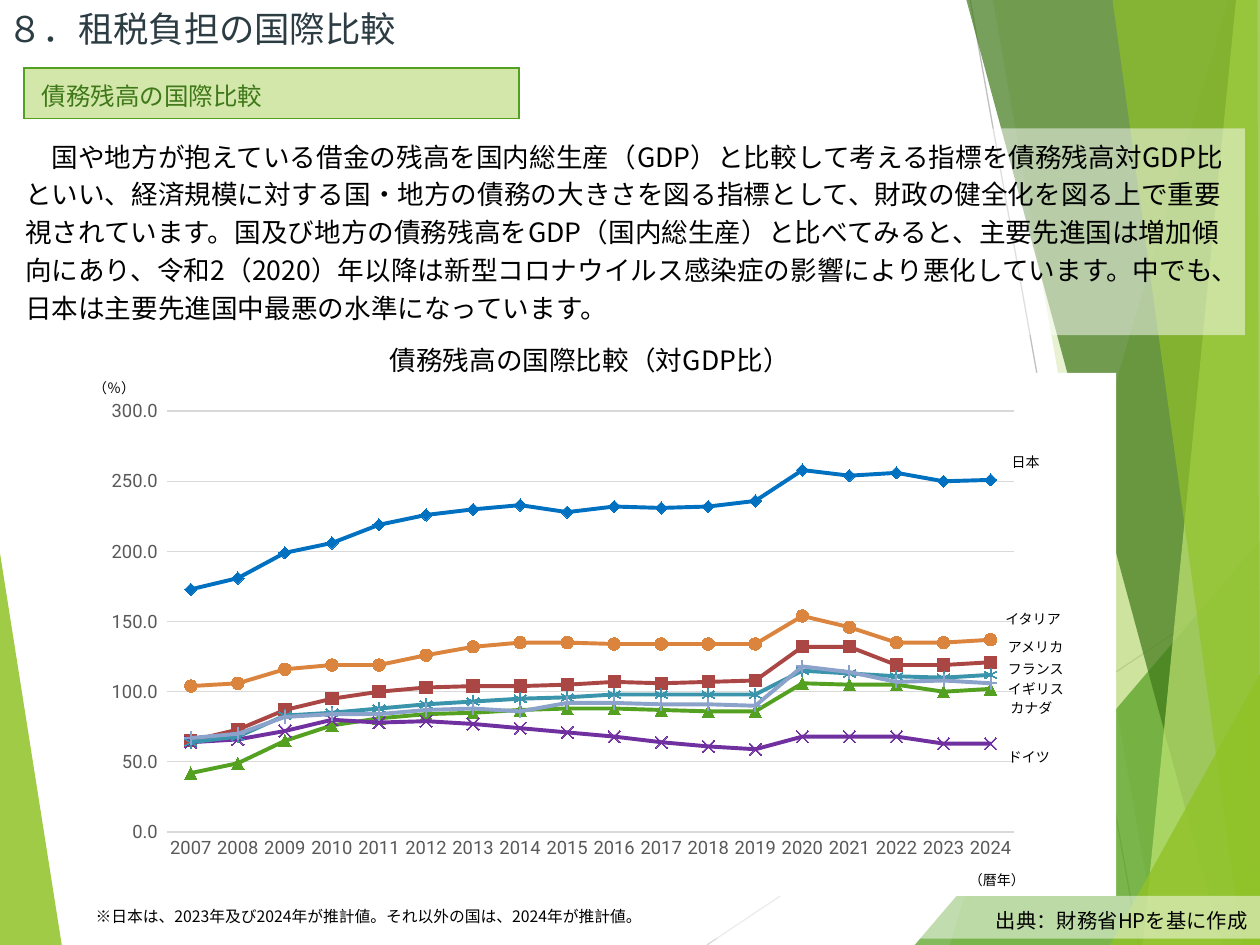
from lxml import etree
from pptx import Presentation
from pptx.chart.data import CategoryChartData
from pptx.dml.color import RGBColor
from pptx.enum.chart import XL_CHART_TYPE, XL_MARKER_STYLE, XL_TICK_MARK
from pptx.enum.shapes import MSO_CONNECTOR, MSO_SHAPE
from pptx.enum.text import MSO_ANCHOR, MSO_AUTO_SIZE, PP_ALIGN
from pptx.oxml import parse_xml
from pptx.oxml.ns import nsdecls, qn
from pptx.util import Inches, Pt

LEFT, CENTER, RIGHT = PP_ALIGN.LEFT, PP_ALIGN.CENTER, PP_ALIGN.RIGHT
TOP, MIDDLE = MSO_ANCHOR.TOP, MSO_ANCHOR.MIDDLE
MARKER = XL_MARKER_STYLE
JAPANESE, LATIN = "Noto Sans CJK JP", "Roboto"

# The slide is a grid of 100 columns by 75 rows
WIDTH, HEIGHT = Inches(10), Inches(7.5)
COLUMNS, ROWS = 100, 75

COLORS = {
    "white": "FFFFFF", "black": "000000", "title": "2C3C43", "gray": "595959",
    "grid": "D9D9D9", "ray": "BFBFBF", "lime": "90C226", "pale": "C0E474",
    "green": "54A021", "dark": "3F7819", "heading": "D2E7A9",
}

# Content
TITLE = "８．租税負担の国際比較"
HEADING = "債務残高の国際比較"
BODY = (
    "　国や地方が抱えている借金の残高を国内総生産（GDP）と比較して考える指標を"
    "債務残高対GDP比といい、経済規模に対する国・地方の債務の大きさを図る指標として、"
    "財政の健全化を図る上で重要視されています。国及び地方の債務残高をGDP（国内総生産）と"
    "比べてみると、主要先進国は増加傾向にあり、令和2（2020）年以降は新型コロナウイルス"
    "感染症の影響により悪化しています。中でも、日本は主要先進国中最悪の水準になっています。"
)
CHART_TITLE = "債務残高の国際比較（対GDP比）"
SOURCE = "出典：財務省HPを基に作成"
NOTE = "※日本は、2023年及び2024年が推計値。それ以外の国は、2024年が推計値。"

YEARS = [str(year) for year in range(2007, 2025)]
# Country, colour, marker, filled marker, values
SERIES = [
    ("日本", "0070C0", MARKER.DIAMOND, True,
     (173, 181, 199, 206, 219, 226, 230, 233, 228, 232, 231, 232, 236, 258, 254, 256, 250, 251)),
    ("アメリカ", "AA4643", MARKER.SQUARE, True,
     (65, 73, 87, 95, 100, 103, 104, 104, 105, 107, 106, 107, 108, 132, 132, 119, 119, 121)),
    ("イギリス", "54A021", MARKER.TRIANGLE, True,
     (42, 49, 65, 76, 81, 84, 85, 87, 88, 88, 87, 86, 86, 106, 105, 105, 100, 102)),
    ("ドイツ", "7030A0", MARKER.X, False,
     (64, 66, 72, 80, 78, 79, 77, 74, 71, 68, 64, 61, 59, 68, 68, 68, 63, 63)),
    ("フランス", "3994AC", MARKER.STAR, False,
     (64, 68, 83, 85, 88, 91, 93, 95, 96, 98, 98, 98, 98, 115, 113, 111, 110, 112)),
    ("イタリア", "DB843D", MARKER.CIRCLE, True,
     (104, 106, 116, 119, 119, 126, 132, 135, 135, 134, 134, 134, 134, 154, 146, 135, 135, 137)),
    ("カナダ", "8BA3CA", MARKER.PLUS, False,
     (67, 70, 82, 84, 84, 87, 88, 86, 92, 92, 91, 91, 90, 118, 114, 107, 108, 106)),
]
PLOT = {"x": 0.073, "y": 0.055, "w": 0.895, "h": 0.823}
# Text, column, row, columns wide
CHART_LABELS = [
    ("（％）", 6.4, 29.6, 5.7), ("（暦年）", 75.9, 68.7, 6.9), ("日本", 79.3, 35.5, 4.5),
    ("イタリア", 78.8, 48, 6.9), ("アメリカ", 79, 50.2, 6.9), ("フランス", 79, 51.9, 6.9),
    ("カナダ", 79.2, 55, 5.7), ("イギリス", 79, 53.5, 6.9), ("ドイツ", 79, 58.9, 5.7),
]

# Backdrop: colour, opacity in percent, corners as (column, row)
RAYS = [("grid", (56.1, 75), (100, 45.7)), ("ray", (77, 0), (90.4, 75))]
FACETS = [
    ("lime", 85, [(0, 43.9), (4.9, 75), (0, 75)]),
    ("lime", 30, [(97.5, 0), (75.4, 75), (100, 75), (100, 0)]),
    ("lime", 20, [(78.8, 0), (91.9, 75), (100, 75), (100, 0)]),
    ("green", 72, [(72.6, 75), (100, 42.9), (100, 75)]),
    ("dark", 70, [(76.7, 0), (97, 75), (100, 75), (100, 0)]),
    ("pale", 70, [(98.1, 0), (90.7, 75), (100, 75), (100, 0)]),
    ("lime", 65, [(88.3, 0), (98.6, 75), (100, 75), (99.8, 0)]),
    ("lime", 80, [(88.1, 75), (100, 53.5), (100, 75)]),
]

presentation = Presentation()
presentation.slide_width, presentation.slide_height = WIDTH, HEIGHT
slide = presentation.slides.add_slide(presentation.slide_layouts[6])
shapes = slide.shapes


def place(column, row):
    return int(WIDTH * column / COLUMNS), int(HEIGHT * row / ROWS)


def box(column, row, columns, rows):
    return place(column, row) + place(columns, rows)


def color(name):
    return RGBColor.from_string(COLORS.get(name, name))


def paint(shape, name, opacity=100):
    shape.shadow.inherit = False
    shape.line.fill.background()
    shape.fill.solid()
    shape.fill.fore_color.rgb = color(name)
    if opacity < 100:
        rgb = shape.fill._xPr.find(".//" + qn("a:srgbClr"))
        etree.SubElement(rgb, qn("a:alpha"), val=str(opacity * 1000))


def style_font(font, size, name, family):
    font.size, font.name = Pt(size), family
    font.color.rgb = color(name)


def write(frame, text, size, name="black", family=JAPANESE, align=LEFT, spacing=None):
    frame.text = text
    paragraph = frame.paragraphs[0]
    paragraph.alignment = align
    if spacing:
        paragraph.line_spacing = Pt(spacing)
    run = paragraph.runs[0]
    style_font(run.font, size, name, family)
    east_asian = parse_xml(f'<a:ea {nsdecls("a")} typeface="{family}"/>')
    run.font._element.find(qn("a:latin")).addnext(east_asian)


def add_panel(area, text, size, align, spacing):
    panel = shapes.add_shape(MSO_SHAPE.RECTANGLE, *box(*area))
    paint(panel, "white", 50)
    frame = panel.text_frame
    frame.word_wrap, frame.vertical_anchor = True, TOP
    frame.auto_size = MSO_AUTO_SIZE.SHAPE_TO_FIT_TEXT
    write(frame, text, size, align=align, spacing=spacing)


def add_text(area, text, size, wrap=True, **style):
    frame = shapes.add_textbox(*box(*area)).text_frame
    frame.word_wrap = wrap
    write(frame, text, size, **style)
    return frame


# Backdrop
for name, start, end in RAYS:
    ray = shapes.add_connector(MSO_CONNECTOR.STRAIGHT, *place(*start), *place(*end))
    ray.line.color.rgb, ray.line.width = color(name), Pt(0.75)
    etree.SubElement(ray._element.spPr, qn("a:effectLst"))
for name, opacity, corners in FACETS:
    points = [place(*corner) for corner in corners]
    builder = shapes.build_freeform(*points[0])
    builder.add_line_segments(points[1:], close=True)
    paint(builder.convert_to_shape(), name, opacity)

# Heading table
add_panel((24.9, 26.3, 43.8, 4.1), CHART_TITLE, 15.2, CENTER, 21.6)
table = shapes.add_table(1, 1, *box(1.9, 5.4, 39.3, 4)).table
table.first_row = table.horz_banding = False
cell = table.cell(0, 0)
cell.margin_left = cell.margin_right = Inches(0.14)
cell.margin_top = cell.margin_bottom = Inches(0.07)
write(cell.text_frame, HEADING, 14, "dark")
for side in ("lnL", "lnR", "lnT", "lnB"):
    cell._tc.get_or_add_tcPr().append(parse_xml(
        f'<a:{side} {nsdecls("a")} w="{Pt(1)}"><a:solidFill>'
        f'<a:srgbClr val="{COLORS["green"]}"/></a:solidFill></a:{side}>'))
cell.fill.solid()
cell.fill.fore_color.rgb = color("heading")

# Title, body and notes
add_panel((1, 10.2, 97.8, 16.4), BODY, 15.2, LEFT, 21.6)
add_panel((32, 71.1, 68, 3.4), SOURCE, 11.6, RIGHT, 17.3)
title_frame = add_text((0, 0, 40, 4.5), TITLE, 20.2, name="title")
title_frame.vertical_anchor = MIDDLE
title_frame.margin_left = Inches(0.06)
title_frame.margin_right = title_frame.margin_top = title_frame.margin_bottom = 0
add_text((6.6, 70.6, 68.5, 3.2), NOTE, 9, spacing=17.3)

# Chart
paint(shapes.add_shape(MSO_SHAPE.RECTANGLE, *box(5, 29.6, 83.6, 41.5)), "white")
data = CategoryChartData(number_format="0")
data.categories = YEARS
for country, _, _, _, values in SERIES:
    data.add_series(country, values)
chart = shapes.add_chart(XL_CHART_TYPE.LINE_MARKERS, *box(7.8, 30.4, 75.1, 40.6), data).chart
chart.has_legend = chart.has_title = False
style_font(chart.font, 10, "black", LATIN)
chart.plots[0].vary_by_categories = False
for series, (_, hue, marker, filled, _) in zip(chart.plots[0].series, SERIES):
    series.smooth = False
    series.format.line.color.rgb, series.format.line.width = color(hue), Pt(2.25)
    series.marker.style, series.marker.size = marker, 7
    series.marker.format.line.color.rgb = color(hue)
    if filled:
        series.marker.format.fill.solid()
        series.marker.format.fill.fore_color.rgb = color(hue)
    else:
        series.marker.format.fill.background()

category_axis, value_axis = chart.category_axis, chart.value_axis
for axis in (category_axis, value_axis):
    axis.major_tick_mark = axis.minor_tick_mark = XL_TICK_MARK.NONE
    style_font(axis.tick_labels.font, 10.5, "gray", LATIN)
value_axis.minimum_scale, value_axis.maximum_scale, value_axis.major_unit = 0, 300, 50
value_axis.tick_labels.number_format = "0.0_ "
value_axis.tick_labels.number_format_is_linked = False
value_axis.format.line.fill.background()
for line in (category_axis.format.line, value_axis.major_gridlines.format.line):
    line.color.rgb, line.width = color("grid"), Pt(0.75)

plot_area = chart._chartSpace.chart.plotArea
for old_layout in plot_area.findall(qn("c:layout")):
    plot_area.remove(old_layout)
sizes = "".join(f'<c:{key} val="{share}"/>' for key, share in PLOT.items())
plot_area.insert(0, parse_xml(
    f'<c:layout {nsdecls("c")}><c:manualLayout><c:layoutTarget val="inner"/>'
    f'<c:xMode val="edge"/><c:yMode val="edge"/>{sizes}</c:manualLayout></c:layout>'))

# Chart labels
for text, column, row, columns in CHART_LABELS:
    add_text((column, row, columns, 2.4), text, 8, wrap=False, family=LATIN)

presentation.save("out.pptx")
